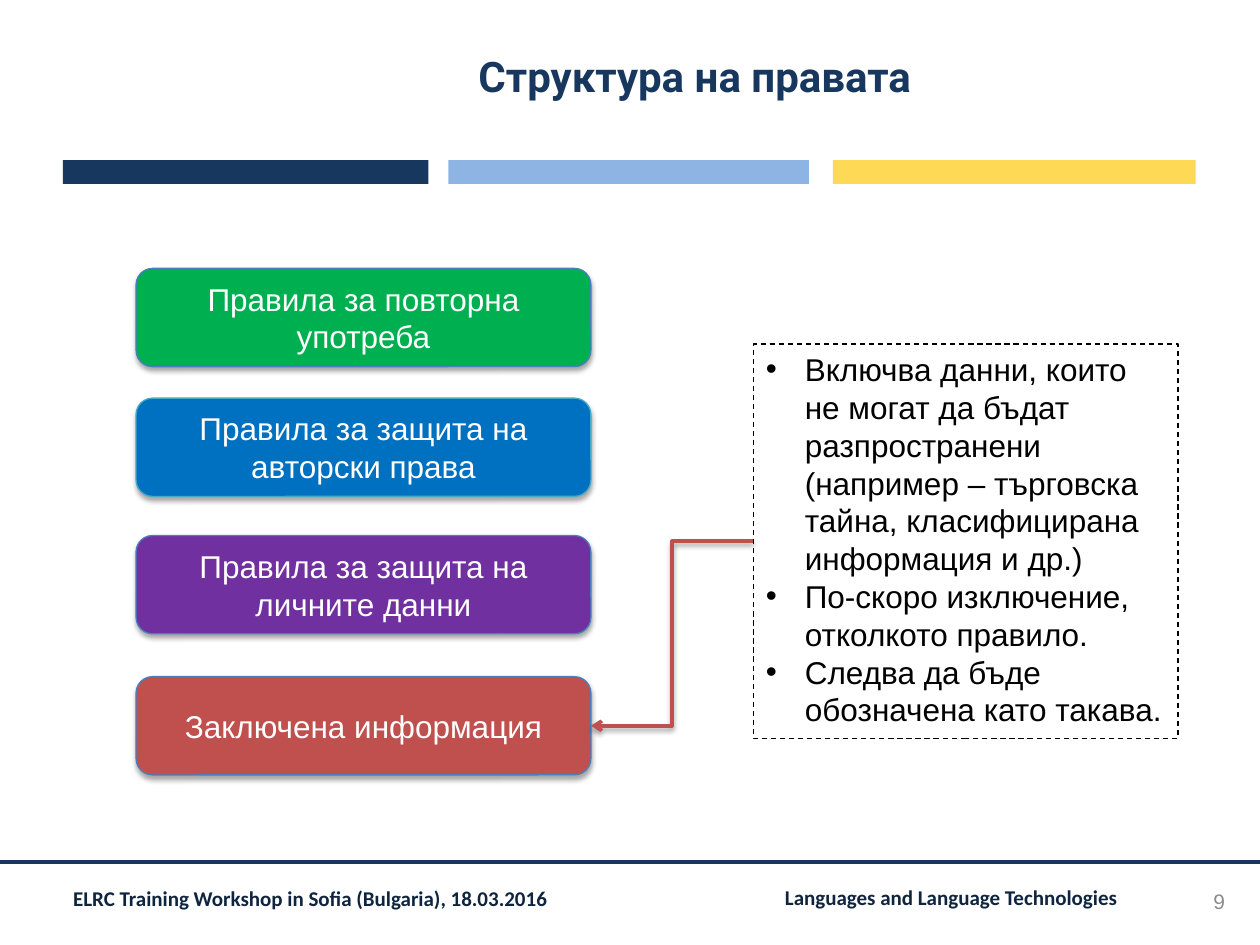
import pptx
import pptx.dml.color
import pptx.enum.dml
import pptx.enum.shapes
import pptx.enum.text
import pptx.oxml
import pptx.oxml.ns
import pptx.util

SHAPES = pptx.enum.shapes.MSO_SHAPE
CONNECTORS = pptx.enum.shapes.MSO_CONNECTOR
ALIGN = pptx.enum.text.PP_ALIGN
MIDDLE = pptx.enum.text.MSO_ANCHOR.MIDDLE
NAVY, RED, BLACK, WHITE = "17375E", "C0504D", "000000", "FFFFFF"
rgb = pptx.dml.color.RGBColor.from_string

deck = pptx.Presentation()
deck.slide_width = pptx.util.Inches(10)
deck.slide_height = pptx.util.Inches(7.5)
COLUMN = deck.slide_width / 100
ROW = deck.slide_height / 75
slide = deck.slides.add_slide(deck.slide_layouts[5])


def grid(left, top, width, height):
    """Turn columns and rows (100 by 75 on the slide) into lengths."""
    return [pptx.util.Emu(round(n * unit)) for n, unit in
            zip((left, top, width, height), (COLUMN, ROW, COLUMN, ROW))]


def add_run(paragraph, text, size, font, color, bold=False):
    run = paragraph.add_run()
    run.text = text
    run.font.size = pptx.util.Pt(size)
    run.font.name = font
    run.font.bold = bold
    run.font.color.rgb = rgb(color)


# Title
title = slide.shapes.title
title.left, title.top, title.width, title.height = grid(23.6, 1.4, 63.1, 9.2)
heading = title.text_frame
heading.margin_left = heading.margin_right = 0
heading.margin_top = heading.margin_bottom = 0
heading.vertical_anchor = MIDDLE
heading.paragraphs[0].alignment = ALIGN.CENTER
add_run(heading.paragraphs[0], "Структура на правата", 24, "Roboto", NAVY, True)

# Tricolour band under the title
for left, width, color in ((5, 29, NAVY), (35.6, 28.6, "8EB4E3"), (66.1, 28.8, "FED956")):
    band = slide.shapes.add_shape(SHAPES.RECTANGLE, *grid(left, 12.7, width, 1.9))
    band.shadow.inherit = False
    band.fill.solid()
    band.fill.fore_color.rgb = rgb(color)
    band.line.fill.background()

# Footer
left, top, right, _ = grid(0, 68.4, 100, 0)
footer_rule = slide.shapes.add_connector(CONNECTORS.STRAIGHT, left, top, right, top)
footer_rule.line.color.rgb = rgb(NAVY)
footer_rule.line.width = pptx.util.Pt(2.25)
pptx.oxml.ns.qn("a:effectLst")
footer_rule._element.spPr.append(pptx.oxml.parse_xml(
    f"<a:effectLst {pptx.oxml.ns.nsdecls('a')}/>"))

for text, left, top, width in (
        ("ELRC Training Workshop in Sofia (Bulgaria), 18.03.2016", 5, 70.1, 47.2),
        ("Languages and Language Technologies", 61.5, 70, 29.5)):
    footer = slide.shapes.add_textbox(*grid(left, top, width, 2.7)).text_frame
    footer.word_wrap = True
    footer.margin_left = footer.margin_right = pptx.util.Inches(0.08)
    footer.margin_top = footer.margin_bottom = pptx.util.Inches(0.04)
    footer.paragraphs[0].line_spacing = 0.9
    add_run(footer.paragraphs[0], text, 12, "Calibri", "0F243E", True)

page = slide.shapes.add_textbox(*grid(74.9, 69.5, 23.3, 4)).text_frame
page.word_wrap = True
page.vertical_anchor = MIDDLE
page.paragraphs[0].alignment = ALIGN.RIGHT
add_run(page.paragraphs[0], "9", 12, "Arial", "8C8C8C")

# Layers of rights, the last one being the locked information
layers = []
for text, top, fill, outline in (
        ("Правила за повторна употреба", 21.3, "00B050", "4B7EBC"),
        ("Правила за защита на авторски права", 31.6, "0070C0", "46AAC5"),
        ("Правила за защита на личните данни", 42.5, "7030A0", "4B7EBC"),
        ("Заключена информация", 53.7, RED, "4B7EBC")):
    layer = slide.shapes.add_shape(SHAPES.ROUNDED_RECTANGLE, *grid(10.8, top, 36.1, 7.8))
    layer.fill.solid()
    layer.fill.fore_color.rgb = rgb(fill)
    layer.line.color.rgb = rgb(outline)
    layer.line.width = pptx.util.Pt(0.75)
    layer.text_frame.vertical_anchor = MIDDLE
    layer.text_frame.paragraphs[0].alignment = ALIGN.CENTER
    add_run(layer.text_frame.paragraphs[0], text, 18, "Arial", WHITE)
    layers.append(layer)

# Explanation of the locked information
note = slide.shapes.add_shape(SHAPES.RECTANGLE, *grid(59.8, 27.3, 33.7, 31.3))
note.shadow.inherit = False
note.fill.background()
note.line.color.rgb = rgb(BLACK)
note.line.width = pptx.util.Pt(0.75)
note.line.dash_style = pptx.enum.dml.MSO_LINE.DASH
note.text_frame.vertical_anchor = pptx.enum.text.MSO_ANCHOR.TOP
indent = pptx.util.Inches(0.31)
for i, text in enumerate((
        "Включва данни, които не могат да бъдат разпространени "
        "(например – търговска тайна, класифицирана информация и др.)",
        "По-скоро изключение, отколкото правило.",
        "Следва да бъде обозначена като такава.")):
    point = note.text_frame.add_paragraph() if i else note.text_frame.paragraphs[0]
    point.alignment = ALIGN.LEFT
    properties = point._p.get_or_add_pPr()
    properties.set("marL", str(indent))
    properties.set("indent", str(-indent))
    for bullet in ('<a:buFont {} typeface="Arial"/>', '<a:buChar {} char="•"/>'):
        properties.append(pptx.oxml.parse_xml(bullet.format(pptx.oxml.ns.nsdecls("a"))))
    add_run(point, text, 18, "Arial", BLACK)

# Arrow from the explanation to the locked information
arrow = slide.shapes.add_connector(CONNECTORS.ELBOW, 0, 0, 0, 0)
arrow.begin_connect(note, 1)
arrow.end_connect(layers[-1], 3)
arrow.line.color.rgb = rgb(RED)
arrow.line.width = pptx.util.Pt(2)
arrow.line._get_or_add_ln().append(pptx.oxml.parse_xml(
    f'<a:tailEnd {pptx.oxml.ns.nsdecls("a")} type="arrow"/>'))

# Soft shadow straight below the layers and the arrow
for raised, opacity in [(layer, 35) for layer in layers] + [(arrow, 38)]:
    raised._element.spPr.append(pptx.oxml.parse_xml(
        f'<a:effectLst {pptx.oxml.ns.nsdecls("a")}>'
        f'<a:outerShdw blurRad="{pptx.util.Pt(3.1)}" dist="{pptx.util.Pt(1.8)}" '
        f'dir="5400000" rotWithShape="0"><a:srgbClr val="{BLACK}">'
        f'<a:alpha val="{opacity * 1000}"/></a:srgbClr></a:outerShdw></a:effectLst>'))

deck.save("out.pptx")
